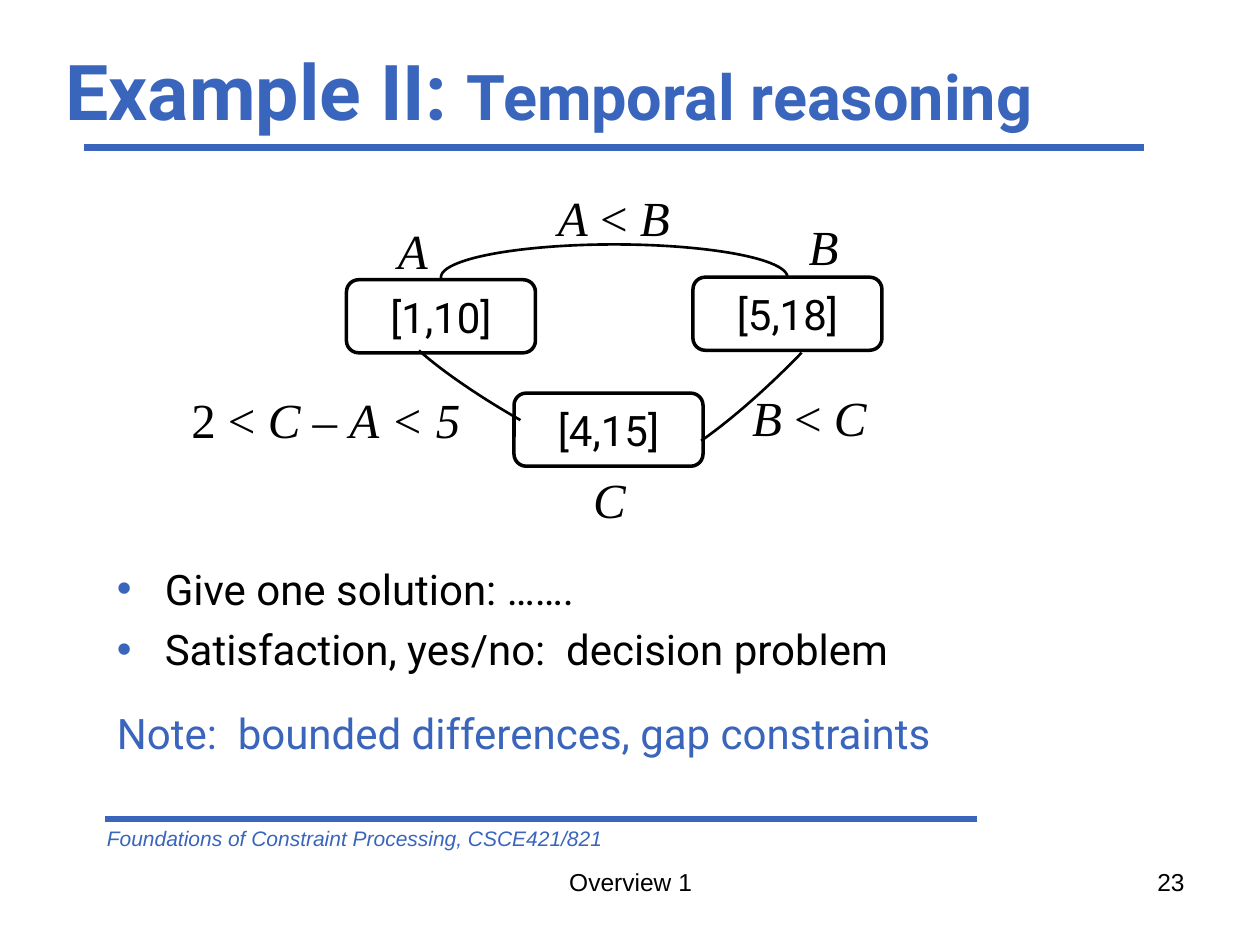
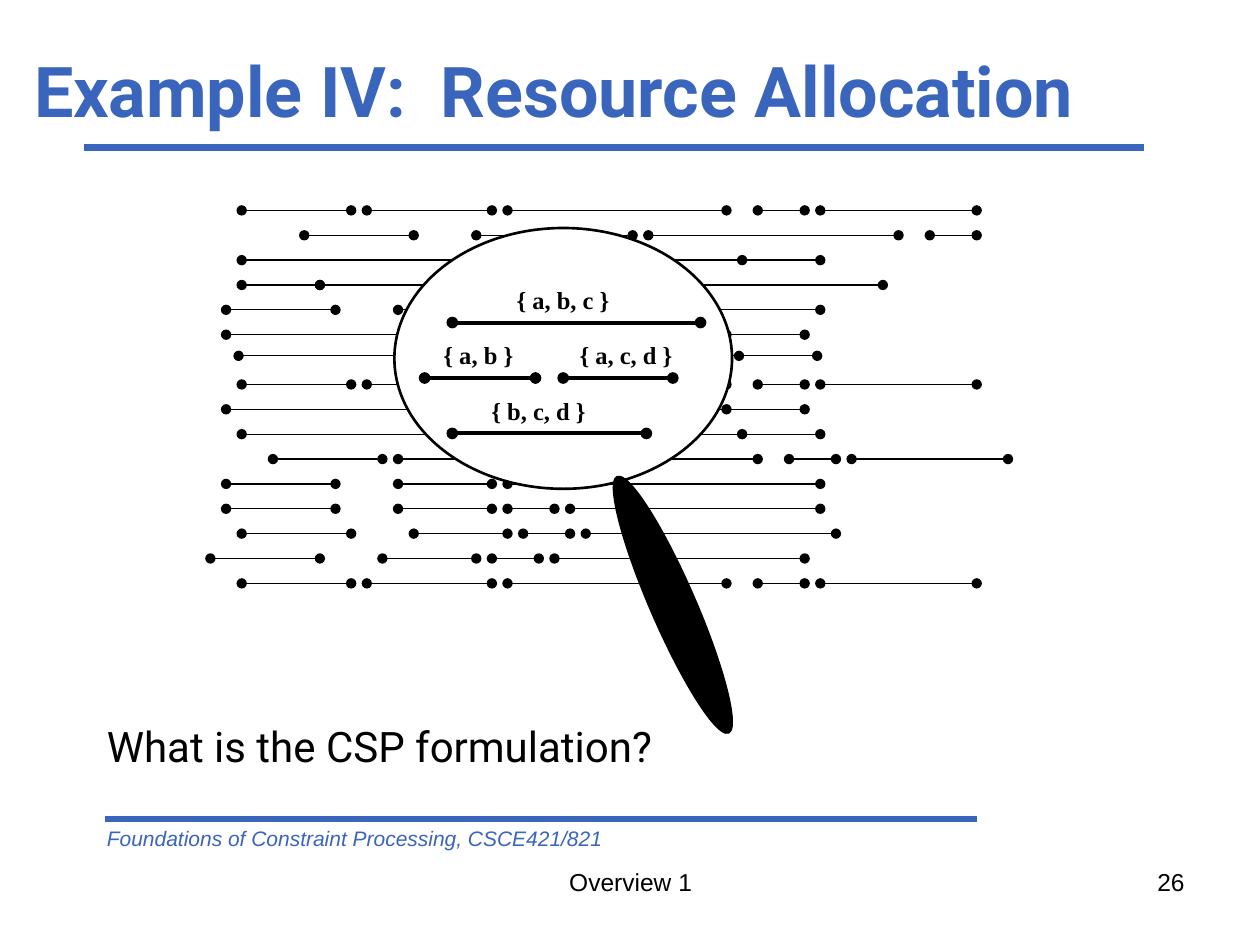
import pptx
import pptx.util
import pptx.dml.color
import pptx.enum.shapes
import pptx.enum.text
import pptx.oxml.ns
import lxml.etree

Inches = pptx.util.Inches
Pt = pptx.util.Pt
RGBColor = pptx.dml.color.RGBColor
MSO_SHAPE = pptx.enum.shapes.MSO_SHAPE
PP_ALIGN = pptx.enum.text.PP_ALIGN
MSO_ANCHOR = pptx.enum.text.MSO_ANCHOR
qn = pptx.oxml.ns.qn

BLUE = RGBColor(0x3A, 0x65, 0xBC)
BLACK = RGBColor(0, 0, 0)
WHITE = RGBColor(0xFF, 0xFF, 0xFF)
ROBOTO = "Roboto"
ARIAL = "Arial"
TIMES = "Times New Roman"

GRID_LEFT, GRID_TOP = 1.67, 1.67
GRID_COLUMN = 6.33 / 51
GRID_ROW = 2.96 / 15

FIVE_TASKS = [(0, 7), (8, 16), (17, 31), (33, 36), (37, 47)]
FOUR_TASKS = [(0, 7), (11, 17), (18, 21), (22, 38)]
OVERLAPPING_TASKS = [(0, 32), (18, 37)]
TASK_ROWS = [
    (0, 2, FIVE_TASKS),
    (1, 6, FOUR_TASKS + [(40, 43)]),
    (2, 2, OVERLAPPING_TASKS),
    (3, 2, [(0, 5), (5, 41)]),
    (4, 1, FOUR_TASKS),
    (5, 1, OVERLAPPING_TASKS),
    (5.85, 1.8, OVERLAPPING_TASKS),
    (7, 2, FIVE_TASKS),
    (8, 1, OVERLAPPING_TASKS),
    (9, 2, OVERLAPPING_TASKS),
    (10, 4, FIVE_TASKS),
    (11, 1, FOUR_TASKS),
    (12, 1, FOUR_TASKS),
    (13, 2, FOUR_TASKS),
    (14, 0, FOUR_TASKS),
    (15, 2, FIVE_TASKS),
]


def add_run(paragraph, text, size, font_name, color=BLACK, bold=False, italic=False):
    run = paragraph.add_run()
    run.text = text
    font = run.font
    font.size, font.name = Pt(size), font_name
    font.bold, font.italic = bold, italic
    font.color.rgb = color


def add_text_box(slide, left, top, width, height, wrap=True, inset=True):
    shape = slide.shapes.add_textbox(Inches(left), Inches(top), Inches(width), Inches(height))
    frame = shape.text_frame
    frame.word_wrap = wrap
    if not inset:
        frame.margin_left = frame.margin_right = frame.margin_top = frame.margin_bottom = 0
    return frame


def add_line(slide, start_x, start_y, end_x, end_y, width, color=BLACK, oval_ends=False):
    connector = slide.shapes.add_connector(
        pptx.enum.shapes.MSO_CONNECTOR.STRAIGHT,
        Inches(start_x), Inches(start_y), Inches(end_x), Inches(end_y))
    connector.line.width = Pt(width)
    connector.line.color.rgb = color
    if oval_ends:
        line_element = connector.line._get_or_add_ln()
        for end in ("a:headEnd", "a:tailEnd"):
            lxml.etree.SubElement(line_element, qn(end), type="oval")
    lxml.etree.SubElement(connector._element.spPr, qn("a:effectLst"))


def add_outlined_shape(slide, kind, left, top, width, height, line_width, fill=None, rotation=0):
    shape = slide.shapes.add_shape(
        kind, Inches(left), Inches(top), Inches(width), Inches(height))
    shape.shadow.inherit = False
    shape.rotation = rotation
    shape.line.width = Pt(line_width)
    shape.line.color.rgb = BLACK
    if fill is None:
        shape.fill.background()
    else:
        shape.fill.solid()
        shape.fill.fore_color.rgb = fill
    return shape


def add_interval_box(slide, text, left, top):
    shape = add_outlined_shape(slide, MSO_SHAPE.ROUNDED_RECTANGLE, left, top, 1.5, 0.58, 2)
    shape.text_frame.vertical_anchor = MSO_ANCHOR.MIDDLE
    paragraph = shape.text_frame.paragraphs[0]
    paragraph.alignment = PP_ALIGN.CENTER
    add_run(paragraph, text, 24, ROBOTO)


def add_arc(slide, left, top, rotation, start, end):
    shape = add_outlined_shape(
        slide, MSO_SHAPE.ARC, left, top, 2.75, 0.52, 1.5, rotation=rotation)
    shape.adjustments[0] = start
    shape.adjustments[1] = end


def add_formula(slide, left, top, width, parts):
    frame = add_text_box(slide, left, top, width, 0.57, wrap=False)
    for text, italic in parts:
        add_run(frame.paragraphs[0], text, 28, TIMES, italic=italic)


def add_bullet(paragraph):
    properties = paragraph._p.get_or_add_pPr()
    properties.set("marL", str(Inches(0.38)))
    properties.set("indent", str(-Inches(0.38)))
    bullet_color = lxml.etree.SubElement(properties, qn("a:buClr"))
    lxml.etree.SubElement(bullet_color, qn("a:srgbClr"), val=str(BLUE))
    lxml.etree.SubElement(properties, qn("a:buFont"), typeface=ARIAL)
    lxml.etree.SubElement(properties, qn("a:buChar"), char="•")


def add_base_slide(presentation, left, width, title_parts, number):
    slide = presentation.slides.add_slide(presentation.slide_layouts[5])
    title = slide.shapes.title
    title.left, title.top = Inches(left), Inches(0.25)
    title.width, title.height = Inches(width), Inches(0.92)
    frame = title.text_frame
    frame.auto_size = pptx.enum.text.MSO_AUTO_SIZE.NONE
    frame.vertical_anchor = MSO_ANCHOR.MIDDLE
    frame.paragraphs[0].alignment = PP_ALIGN.LEFT
    for text, size in title_parts:
        add_run(frame.paragraphs[0], text, size, ROBOTO, BLUE, bold=True)

    add_line(slide, 0.67, 1.17, 9.08, 1.17, 4, BLUE)
    add_line(slide, 0.83, 6.5, 7.75, 6.5, 4, BLUE)
    course = add_text_box(slide, 0.75, 6.5, 5.25, 0.3)
    add_run(course.paragraphs[0], "Foundations of Constraint Processing, CSCE421/821",
            12, ARIAL, BLUE, italic=True)
    for text, box_left, box_width, alignment in [
            ("Overview 1", 3.42, 3.17, PP_ALIGN.CENTER),
            (number, 7.17, 2.33, PP_ALIGN.RIGHT)]:
        footer = add_text_box(slide, box_left, 6.83, box_width, 0.52)
        footer.paragraphs[0].alignment = alignment
        add_run(footer.paragraphs[0], text, 14, ARIAL)
    return slide


def build_temporal_slide(presentation):
    slide = add_base_slide(
        presentation, 0.42, 9.25, [("Example II: ", 44), ("Temporal reasoning", 36)], "23")
    for text, left, top in [("[1,10]", 2.75, 2.22), ("[5,18]", 5.5, 2.2), ("[4,15]", 4.08, 3.12)]:
        add_interval_box(slide, text, left, top)

    add_arc(slide, 3.5, 1.94, 0, 107.87, 0)
    add_arc(slide, 2.94, 2.88, 209.2, 170.65, 210.42)
    add_arc(slide, 4.72, 2.44, 135, 147.26, 209.15)

    add_formula(slide, 4.33, 1.44, 1.1, [("A", True), (" < ", False), ("B", True)])
    add_formula(slide, 5.87, 3.03, 1.12, [("B", True), (" < ", False), ("C", True)])
    add_formula(slide, 1.42, 3.04, 2.36,
                [("2 < ", False), ("C ", True), ("– ", False), ("A < 5", True)])
    for name, left, top in [("A", 3.06, 1.7), ("B", 6.32, 1.67), ("C", 4.61, 3.68)]:
        add_formula(slide, left, top, 0.44, [(name, True)])

    body = add_text_box(slide, 0.83, 4.42, 8.5, 1.92)
    first = body.paragraphs[0]
    second = body.add_paragraph()
    note = body.add_paragraph()
    for paragraph, text in [(first, "Give one solution: ……."),
                            (second, "Satisfaction, yes/no:  decision problem")]:
        add_bullet(paragraph)
        add_run(paragraph, text, 24, ROBOTO)
    second.space_before = Pt(5.6)
    note.space_before = Pt(19.3)
    add_run(note, "Note:  bounded differences, gap constraints", 24, ROBOTO, BLUE)


def build_allocation_slide(presentation):
    slide = add_base_slide(
        presentation, 0.17, 9.83, [("Example IV:  Resource Allocation", 40)], "26")
    question = add_text_box(slide, 0.75, 5.67, 8.5, 0.5)
    add_run(question.paragraphs[0], "What is the CSP formulation?", 24, ROBOTO)

    for row, offset, tasks in TASK_ROWS:
        y = GRID_TOP + row * GRID_ROW
        for start, end in tasks:
            add_line(slide, GRID_LEFT + (offset + start) * GRID_COLUMN, y,
                     GRID_LEFT + (offset + end) * GRID_COLUMN, y, 0.75, oval_ends=True)

    add_outlined_shape(slide, MSO_SHAPE.OVAL, 3.13, 1.81, 2.68, 2.07, 1.5, WHITE)
    for text, text_left, start, end, y in [
            ("{ a, b, c }", 4.1, 3.59, 5.56, 2.56),
            ("{ a, b }", 3.52, 3.37, 4.25, 3),
            ("{ a, c, d }", 4.6, 4.47, 5.34, 3),
            ("{ b, c, d }", 3.9, 3.59, 5.13, 3.44)]:
        add_line(slide, start, y, end, y, 2.25, oval_ends=True)
        label = add_text_box(slide, text_left, y - 0.3, 0.8, 0.24, inset=False)
        add_run(label.paragraphs[0], text, 14, TIMES, bold=True)
    add_outlined_shape(slide, MSO_SHAPE.OVAL, 4.23, 4.62, 2.22, 0.36, 0.75, BLACK, 66.5)


def main():
    presentation = pptx.Presentation()
    presentation.slide_width = Inches(10)
    presentation.slide_height = Inches(7.5)
    build_temporal_slide(presentation)
    build_allocation_slide(presentation)
    presentation.save("out.pptx")


if __name__ == "__main__":
    main()
